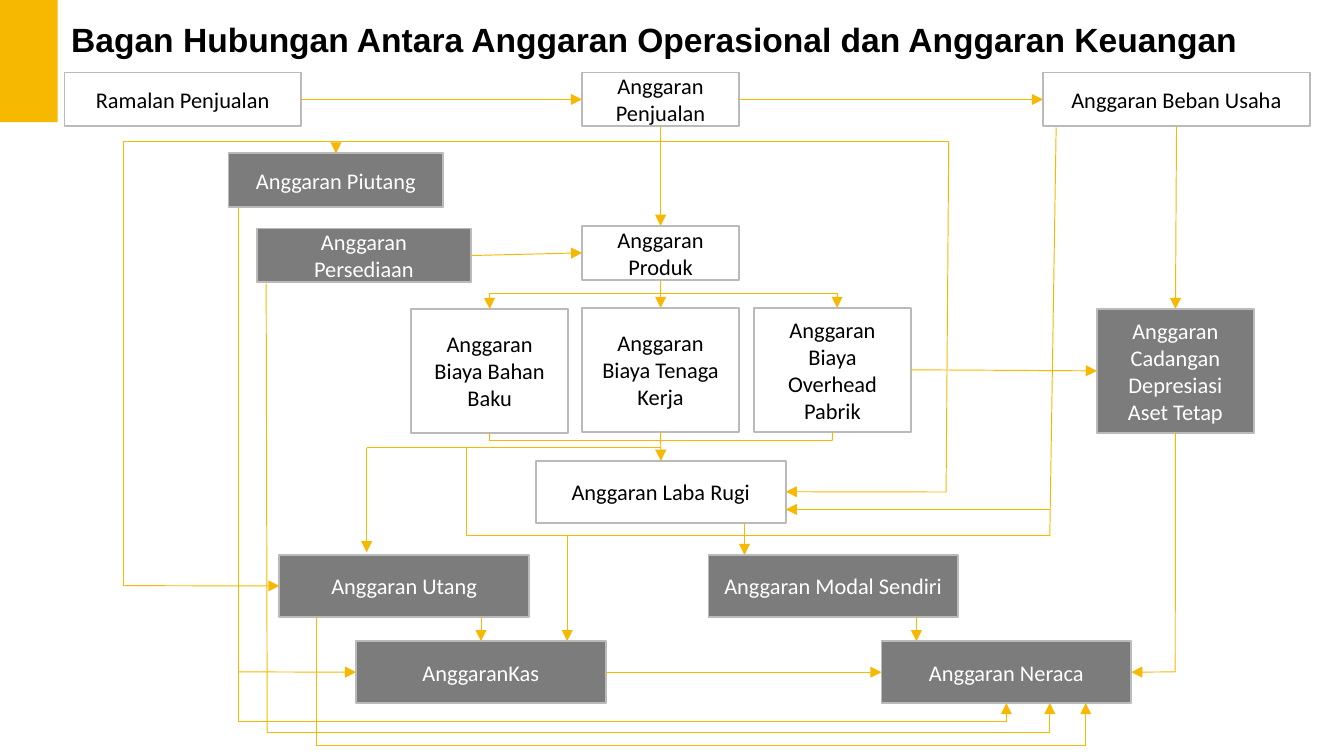
from pptx import Presentation
from pptx import util as u
from pptx.dml.color import RGBColor
from pptx.enum import shapes, text
from pptx.oxml.ns import qn
from lxml import etree

THEME = dict(
    accent="F7B801", border="BABABA", dark="000000", light="FFFFFF", gray="7C7C7C",
    title=dict(name="Arial", size=u.Pt(18), bold=True),
    body=dict(name="Calibri", size=u.Pt(12), bold=False),
    border_width=u.Pt(1), line_width=u.Pt(0.5),
)

# Content: lengths in cm
TITLE = "Bagan Hubungan Antara Anggaran Operasional dan Anggaran Keuangan"
SIZES = dict(forecast=(4.47, 1.02), small=(2.97, 1.02), expense=(5.05, 1.02),
             stock=(4.06, 1.02), cost=(2.97, 2.34), report=(4.72, 1.17))

# key: (label, left, top, size, fill)
BOXES = {
    "ramalan": ("Ramalan Penjualan", 1.22, 1.37, "forecast", "light"),
    "penjualan": ("Anggaran Penjualan", 11, 1.37, "small", "light"),
    "beban": ("Anggaran Beban Usaha", 19.71, 1.37, "expense", "light"),
    "piutang": ("Anggaran Piutang", 4.32, 2.9, "stock", "gray"),
    "persediaan": ("Anggaran Persediaan", 4.85, 4.32, "stock", "gray"),
    "produk": ("Anggaran Produk", 11, 4.27, "small", "light"),
    "bahan": ("Anggaran Biaya Bahan Baku", 7.77, 5.84, "cost", "light"),
    "tenaga": ("Anggaran Biaya Tenaga Kerja", 11, 5.82, "cost", "light"),
    "overhead": ("Anggaran Biaya Overhead Pabrik", 14.25, 5.82, "cost", "light"),
    "cadangan": ("Anggaran Cadangan Depresiasi Aset Tetap", 20.73, 5.84, "cost", "gray"),
    "laba": ("Anggaran Laba Rugi", 10.13, 8.71, "report", "light"),
    "utang": ("Anggaran Utang", 5.28, 10.49, "report", "gray"),
    "modal": ("Anggaran Modal Sendiri", 13.39, 10.49, "report", "gray"),
    "kas": ("AnggaranKas", 6.73, 12.12, "report", "gray"),
    "neraca": ("Anggaran Neraca", 16.66, 12.12, "report", "gray"),
}

# Each stop is (x, y) or (box, side); sides: 0 top, 1 left, 2 bottom, 3 right
ARROWS = [
    [("ramalan", 3), ("penjualan", 1)],
    [("penjualan", 3), ("beban", 1)],
    [("penjualan", 2), ("produk", 0)],
    [("persediaan", 3), ("produk", 1)],
    [("produk", 2), ("tenaga", 0)],
    [("tenaga", 2), ("laba", 0)],
    [("beban", 2), ("cadangan", 0)],
    [("overhead", 3), ("cadangan", 1)],
    [("kas", 3), ("neraca", 1)],
    [("cadangan", 2), (22.21, 12.7), ("neraca", 3)],
    [(12.5, 8.46), (6.93, 8.46), (6.93, 10.44)],
    [(9.25, 5.54), ("bahan", 0)],
    [(15.82, 5.54), (15.82, 5.82)],
    [(6.35, 2.67), ("piutang", 0)],
    [(2.34, 2.67), (17.93, 2.67), (17.88, 9.3), ("laba", 3)],
    [(19.84, 9.63), (14.85, 9.63)],
    [(2.34, 2.67), (2.34, 11.07), ("utang", 1)],
    [(4.5, 3.94), (4.5, 13.64), (19.02, 13.64), ("neraca", 2)],
    [(4.5, 12.7), ("kas", 1)],
    [(5.03, 5.36), (5.05, 13.84), (19.84, 13.84), (19.84, 13.29)],
    [(5.99, 11.66), (5.99, 14.1), (20.52, 14.1), (20.52, 13.29)],
    [(14.07, 9.88), (14.07, 10.49)],
    [(17.32, 11.66), (17.32, 12.12)],
    [(10.72, 10.13), (10.72, 12.12)],
    [(9.09, 11.66), (9.09, 12.12)],
]
PLAIN_LINES = [
    [(19.96, 2.41), (19.84, 10.13), (8.81, 10.13), (8.81, 8.46)],
    [("bahan", 2), (9.25, 8.33), (15.73, 8.33), ("overhead", 2)],
    [(9.25, 5.54), (15.82, 5.54)],
]


def color(key):
    return RGBColor.from_string(THEME[key])


def set_font(font, style, color_key):
    for name, value in THEME[style].items():
        setattr(font, name, value)
    font.color.rgb = color(color_key)


def add_rect(s, x, y, w, h, fill):
    sp = s.shapes.add_shape(shapes.MSO_SHAPE.RECTANGLE, *map(u.Cm, (x, y, w, h)))
    sp.shadow.inherit = False
    sp.fill.solid()
    sp.fill.fore_color.rgb = color(fill)
    return sp


def add_box(s, label, x, y, size, fill):
    sp = add_rect(s, x, y, *SIZES[size], fill)
    sp.line.color.rgb = color("border")
    sp.line.width = THEME["border_width"]
    tf = sp.text_frame
    tf.word_wrap = True
    tf.vertical_anchor = text.MSO_ANCHOR.MIDDLE
    p = tf.paragraphs[0]
    p.alignment = text.PP_ALIGN.CENTER
    r = p.add_run()
    r.text = label
    set_font(r.font, "body", "dark" if fill == "light" else "light")
    return sp


def locate(stop):
    """Position of a stop in cm."""
    if stop[0] not in BOXES:
        return stop
    _, x, y, size, _ = BOXES[stop[0]]
    w, h = SIZES[size]
    return [(x + w / 2, y), (x, y + h / 2), (x + w / 2, y + h), (x + w, y + h / 2)][stop[1]]


def add_route(s, stops, boxes, arrow):
    """Draw one connector per leg, with an arrowhead on the last."""
    for start, end in zip(stops, stops[1:]):
        cxn = s.shapes.add_connector(shapes.MSO_CONNECTOR.STRAIGHT,
                                     *map(u.Cm, (*locate(start), *locate(end))))
        if start[0] in boxes:
            cxn.begin_connect(boxes[start[0]], start[1])
        if end[0] in boxes:
            cxn.end_connect(boxes[end[0]], end[1])
        cxn.line.color.rgb = color("accent")
        cxn.line.width = THEME["line_width"]
        sp_pr = cxn.line._get_or_add_ln().getparent()
        etree.SubElement(sp_pr, qn("a:effectLst"))
    if arrow:
        etree.SubElement(cxn.line._get_or_add_ln(), qn("a:tailEnd"), type="triangle")


def main():
    prs = Presentation()
    prs.slide_width, prs.slide_height = u.Cm(25.4), u.Cm(14.29)
    s = prs.slides.add_slide(prs.slide_layouts[5])

    # Title
    title = s.shapes.title
    title.left, title.top, title.width, title.height = map(u.Cm, (1.09, 0.23, 22.78, 1.02))
    tf = title.text_frame
    tf.word_wrap = False
    tf.vertical_anchor = text.MSO_ANCHOR.TOP
    p = tf.paragraphs[0]
    p.alignment = text.PP_ALIGN.LEFT
    r = p.add_run()
    r.text = TITLE
    set_font(r.font, "title", "dark")

    # Corner accent
    add_rect(s, 0, 0, 1.09, 2.31, "accent").line.fill.background()

    # Budget boxes
    boxes = {key: add_box(s, *box) for key, box in BOXES.items()}

    # Connections
    for routes, arrow in ((PLAIN_LINES, False), (ARROWS, True)):
        for stops in routes:
            add_route(s, stops, boxes, arrow)

    prs.save("out.pptx")


if __name__ == "__main__":
    main()
